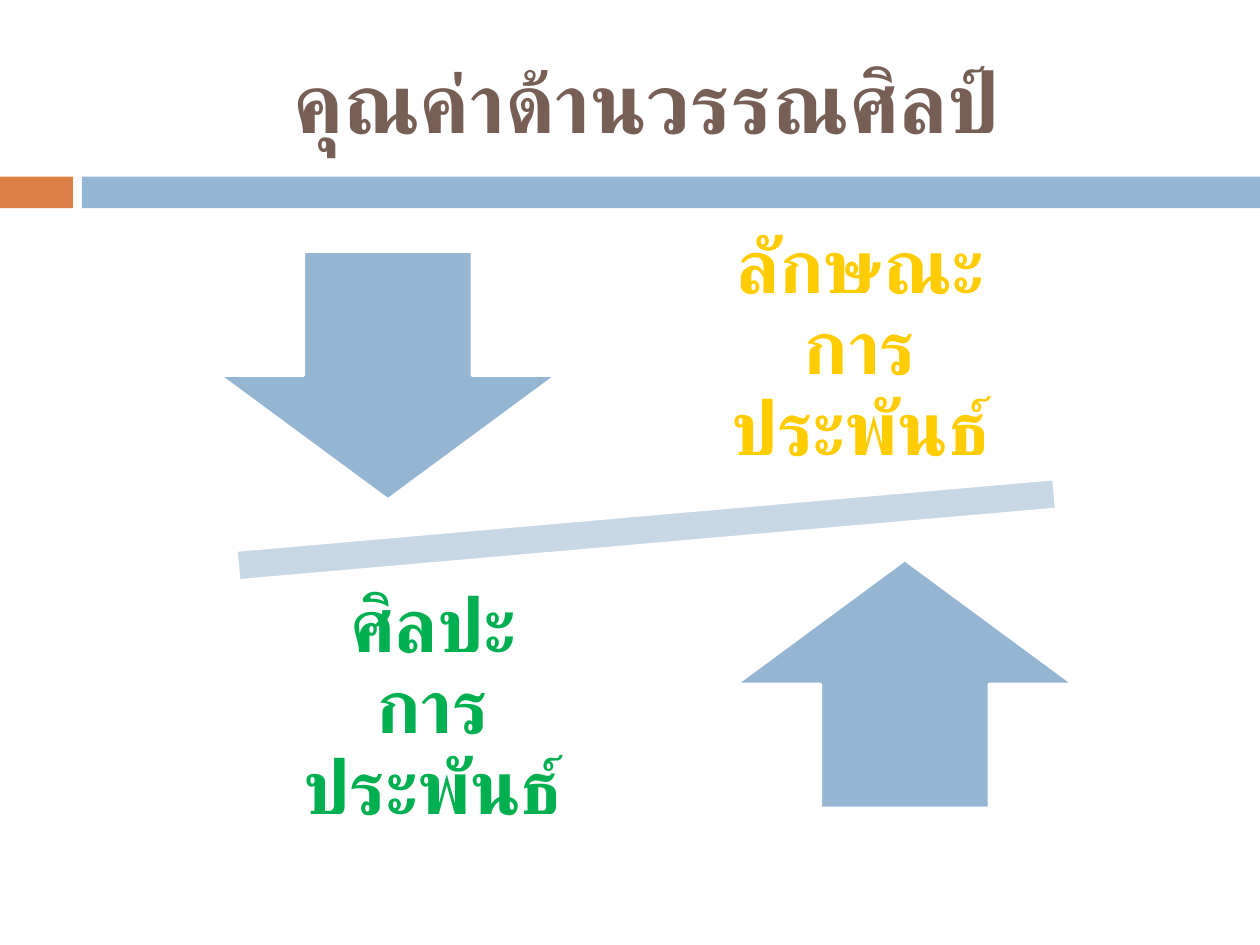
from lxml.etree import SubElement
from pptx import Presentation
from pptx.dml.color import RGBColor
from pptx.enum.shapes import MSO_SHAPE as Shape
from pptx.enum.text import MSO_ANCHOR as Anchor, MSO_AUTO_SIZE as AutoSize, PP_ALIGN as Align
from pptx.oxml.ns import qn
from pptx.util import Cm, Pt

ORANGE = RGBColor(0xDD, 0x80, 0x47)
BLUE = RGBColor(0x94, 0xB6, 0xD2)
PALE_BLUE = RGBColor(0xC8, 0xD7, 0xE5)
BROWN = RGBColor(0x77, 0x5F, 0x55)
YELLOW = RGBColor(0xFF, 0xCC, 0x00)
GREEN = RGBColor(0x00, 0xB0, 0x50)
WHITE = RGBColor(0xFF, 0xFF, 0xFF)
FONT = "Calibri"


def apply_format(target, values):
    for name, value in values.items():
        setattr(target, name, value)


def write_text(holder, text, size, color, frame_format, paragraph_format):
    """Write one bold Thai paragraph into a text holder."""
    frame = holder.text_frame
    apply_format(frame, {"word_wrap": True, "auto_size": AutoSize.NONE,
                         "vertical_anchor": Anchor.MIDDLE, **frame_format})
    paragraph = frame.paragraphs[0]
    apply_format(paragraph, {"alignment": Align.CENTER, **paragraph_format})
    run = paragraph.add_run()
    run.text = text
    apply_format(run.font, {"name": FONT, "size": Pt(size), "bold": True})
    run.font.color.rgb = color
    # Thai is set in the complex-script font
    run_properties = run.font._element
    run_properties.set("lang", "th-TH")
    SubElement(run_properties, qn("a:cs"), typeface=FONT)


def add_solid(slide, kind, box, fill, outlined=False):
    solid = slide.shapes.add_shape(kind, *map(Cm, box))
    solid.shadow.inherit = False
    solid.fill.solid()
    solid.fill.fore_color.rgb = fill
    if outlined:
        solid.line.color.rgb = WHITE
        solid.line.width = Pt(1.5)
    else:
        solid.line.fill.background()
    return solid


def add_band(slide, left, top, width, height):
    """Orange tab and blue bar below the title."""
    tab, gap = 1.47, 0.18
    bar_left = left + tab + gap
    add_solid(slide, Shape.RECTANGLE, (left, top, tab, height), ORANGE)
    add_solid(slide, Shape.RECTANGLE,
              (bar_left, top, left + width - bar_left, height), BLUE)


def add_title(slide, left, top, width, height):
    title = slide.shapes.title
    apply_format(title, {"left": Cm(left), "top": Cm(top),
                         "width": Cm(width), "height": Cm(height)})
    write_text(title, "คุณค่าด้านวรรณศิลป์", 48, BROWN, {}, {})


def add_balance(slide, left, top, width, height):
    """Tilted beam with an arrow and a label mirrored through its centre."""
    center_x, center_y = left + width / 2, top + height / 2

    def centered(dx, dy, w, h):
        return center_x + dx - w / 2, center_y + dy - h / 2, w, h

    # Beam
    beam = add_solid(slide, Shape.MATH_MINUS, centered(0, 0, width, 2.57),
                     PALE_BLUE, outlined=True)
    beam.rotation = 355

    # Arrows and labels
    margins = dict.fromkeys(
        ("margin_left", "margin_top", "margin_right", "margin_bottom"), Cm(0.84))
    sides = (
        (-1, Shape.DOWN_ARROW, "ลักษณะการประพันธ์", YELLOW),
        (1, Shape.UP_ARROW, "ศิลปะการประพันธ์", GREEN),
    )
    for sign, arrow, wording, color in sides:
        add_solid(slide, arrow, centered(sign * 5.21, sign * 3.11, 6.78, 5),
                  BLUE, outlined=True)
        label_box = centered(-sign * 4.31, sign * 3.62, 7.24, 5.23)
        label = slide.shapes.add_textbox(*map(Cm, label_box))
        write_text(label, wording, 43, color, margins,
                   {"line_spacing": 0.9, "space_after": Pt(15)})


def main():
    deck = Presentation()
    apply_format(deck, {"slide_width": Cm(25.4), "slide_height": Cm(19.05)})
    slide = deck.slides.add_slide(deck.slide_layouts[5])
    add_band(slide, 0, 3.56, 25.4, 0.64)
    add_title(slide, 1.7, 0.64, 22.66, 2.74)
    add_balance(slide, 1.78, 4.44, 22.5, 12.48)
    deck.save("out.pptx")


if __name__ == "__main__":
    main()
